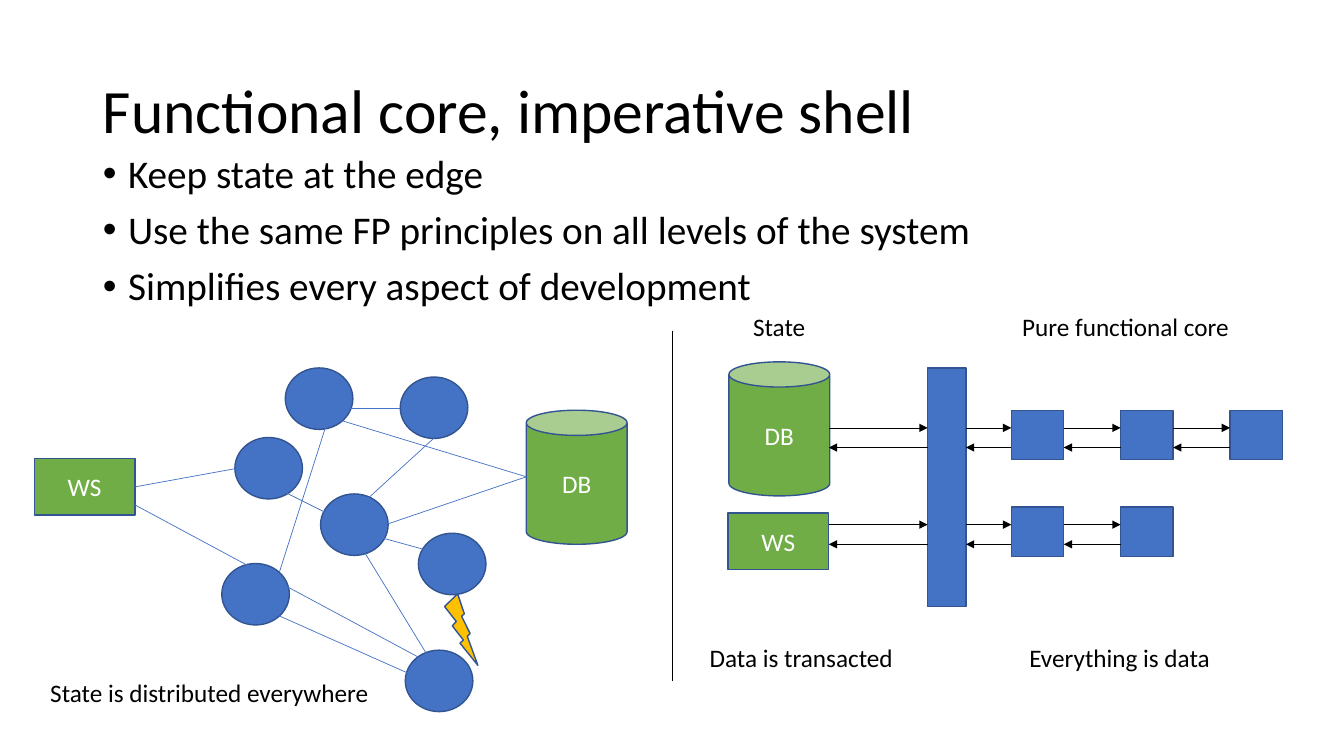
from lxml import etree
from pptx import Presentation
from pptx.dml.color import RGBColor
from pptx.enum.shapes import MSO_CONNECTOR, MSO_SHAPE
from pptx.enum.text import MSO_ANCHOR, MSO_AUTO_SIZE, PP_ALIGN
from pptx.oxml.ns import qn
from pptx.util import Inches, Pt

BLACK = RGBColor(0x00, 0x00, 0x00)
WHITE = RGBColor(0xFF, 0xFF, 0xFF)
BLUE = RGBColor(0x44, 0x72, 0xC4)
DARK_BLUE = RGBColor(0x32, 0x54, 0x91)
GREEN = RGBColor(0x70, 0xAD, 0x47)
AMBER = RGBColor(0xFF, 0xC0, 0x00)

# Content
TITLE = "Functional core, imperative shell"
BULLETS = [
    "Keep state at the edge",
    "Use the same FP principles on all levels of the system",
    "Simplifies every aspect of development",
]
LABELS = [  # text, left, top, width, height
    ("Pure functional core", 10.04, 3.04, 2.28, 0.4),
    ("State", 7.37, 3.04, 0.72, 0.4),
    ("Everything is data", 10.11, 6.32, 2.01, 0.71),
    ("Data is transacted", 6.94, 6.32, 2.04, 0.71),
    ("State is distributed everywhere", 0.4, 6.67, 3.4, 0.4),
]

# Distributed system on the left
NODE_SIZE = (0.67, 0.61)
NODES = [(2.33, 4.34), (3.18, 4.9), (2.83, 3.65), (2.2, 5.59),
         (4.15, 5.29), (3.97, 3.74), (4.02, 6.45)]
LINKS = [  # start x, start y, end x, end y
    (3.28, 4.05, 3.97, 4.05),
    (4.3, 4.35, 3.6, 4.99),
    (3.62, 5.29, 4.42, 5.51),
    (4.3, 6.6, 3.5, 5.29),
    (4.23, 6.76, 2.77, 6.11),
    (3.42, 5.18, 2.72, 4.83),
    (3.26, 4.14, 2.77, 5.68),
    (3.84, 5.2, 5.22, 4.73),
    (3.28, 4.14, 5.22, 4.73),
    (1.34, 5.01, 4.3, 6.6),
]
SERVICE_LINK = (1.34, 4.83, 2.33, 4.65)

# Functional core on the right
DB_SIZE = (1, 1.33)
WS_SIZE = (1, 0.56)
SHELL = (9.2, 3.65, 0.38, 2.37)
BOX_SIZE = (0.52, 0.49)
BOX_LEFT, BOX_PITCH = 10.03, 1.085
STATE_RIGHT = 8.22
CORE_ROWS = [(4.07, 3), (5.03, 2)]  # top, number of boxes
FORWARD_OFFSET, BACK_OFFSET = 0.175, 0.37


def set_font(paragraph, size, color):
    font_format = {"name": "Calibri", "size": Pt(size)}
    for name, value in font_format.items():
        setattr(paragraph.font, name, value)
    paragraph.font.color.rgb = color


def add_block(kind, left, top, size, color, text=""):
    shape = slide.shapes.add_shape(kind, *map(Inches, (left, top, *size)))
    shape.shadow.inherit = False
    shape.fill.solid()
    shape.fill.fore_color.rgb = color
    shape.line.color.rgb = DARK_BLUE
    shape.line.width = Pt(1)
    if text:
        shape.text_frame.text = text
        shape.text_frame.vertical_anchor = MSO_ANCHOR.MIDDLE
        paragraph = shape.text_frame.paragraphs[0]
        paragraph.alignment = PP_ALIGN.CENTER
        set_font(paragraph, 18, WHITE)
    return shape


def add_line(points, color, arrow=False):
    connector = slide.shapes.add_connector(
        MSO_CONNECTOR.STRAIGHT, *map(Inches, points))
    connector.line.color.rgb = color
    connector.line.width = Pt(0.5)
    if arrow:
        line = connector.line._get_or_add_ln()
        etree.SubElement(line, qn("a:tailEnd"), type="triangle")
    etree.SubElement(connector._element.spPr, qn("a:effectLst"))
    return connector


def place(shape, left, top, width, height):
    box = {"left": left, "top": top, "width": width, "height": height}
    for name, value in box.items():
        setattr(shape, name, Inches(value))


presentation = Presentation()
presentation.slide_width = Inches(13.33)
presentation.slide_height = Inches(7.5)
slide = presentation.slides.add_slide(presentation.slide_layouts[1])

# Title and bullets
title, body = slide.placeholders
place(title, 0.92, 0.4, 11.5, 1.45)
title.text_frame.text = TITLE
title.text_frame.vertical_anchor = MSO_ANCHOR.MIDDLE
title.text_frame.auto_size = MSO_AUTO_SIZE.NONE
heading = title.text_frame.paragraphs[0]
heading.alignment = PP_ALIGN.LEFT
heading.line_spacing = 0.9
set_font(heading, 44, BLACK)

place(body, 0.92, 1.48, 11.5, 5.27)
body.text_frame.text = "\n".join(BULLETS)
body.text_frame.auto_size = MSO_AUTO_SIZE.NONE
for index, paragraph in enumerate(body.text_frame.paragraphs):
    paragraph.line_spacing = 0.9
    paragraph.space_before = Pt(10 if index else 0)
    properties = paragraph._p.get_or_add_pPr()
    properties.set("marL", str(Inches(0.25)))
    properties.set("indent", str(Inches(-0.25)))
    etree.SubElement(properties, qn("a:buFont"), typeface="Arial")
    etree.SubElement(properties, qn("a:buChar"), char="•")
    set_font(paragraph, 28, BLACK)

# Distributed system
for left, top in NODES:
    add_block(MSO_SHAPE.OVAL, left, top, NODE_SIZE, BLUE)
add_block(MSO_SHAPE.LIGHTNING_BOLT, 4.41, 5.89, (0.33, 0.71), AMBER)
add_block(MSO_SHAPE.CAN, 5.22, 4.07, DB_SIZE, GREEN, "DB")
service = add_block(MSO_SHAPE.RECTANGLE, 0.34, 4.55, WS_SIZE, GREEN, "WS")
for points in LINKS:
    add_line(points, BLUE)
add_line(SERVICE_LINK, BLUE).begin_connect(service, 3)

# Divider between the two systems
add_line((6.67, 3.28, 6.67, 6.76), BLACK)

# State and shell
add_block(MSO_SHAPE.CAN, 7.23, 3.59, DB_SIZE, GREEN, "DB")
add_block(MSO_SHAPE.RECTANGLE, 7.22, 5.09, WS_SIZE, GREEN, "WS")
shell_left, shell_top, *shell_size = SHELL
add_block(MSO_SHAPE.RECTANGLE, shell_left, shell_top, shell_size, BLUE)

# Core boxes, with a pair of arrows across each gap
for top, count in CORE_ROWS:
    box_lefts = [BOX_LEFT + BOX_PITCH * column for column in range(count)]
    for left in box_lefts:
        add_block(MSO_SHAPE.RECTANGLE, left, top, BOX_SIZE, BLUE)
    gap_starts = [STATE_RIGHT, shell_left + shell_size[0]]
    gap_starts += [left + BOX_SIZE[0] for left in box_lefts[:-1]]
    gap_ends = [shell_left, *box_lefts]
    forward, back = top + FORWARD_OFFSET, top + BACK_OFFSET
    for start, end in zip(gap_starts, gap_ends):
        add_line((start, forward, end, forward), BLACK, arrow=True)
        add_line((end, back, start, back), BLACK, arrow=True)

# Labels
for text, *box in LABELS:
    label = slide.shapes.add_textbox(*map(Inches, box))
    label.text_frame.word_wrap = False
    label.text_frame.text = text
    set_font(label.text_frame.paragraphs[0], 18, BLACK)

presentation.save("out.pptx")
